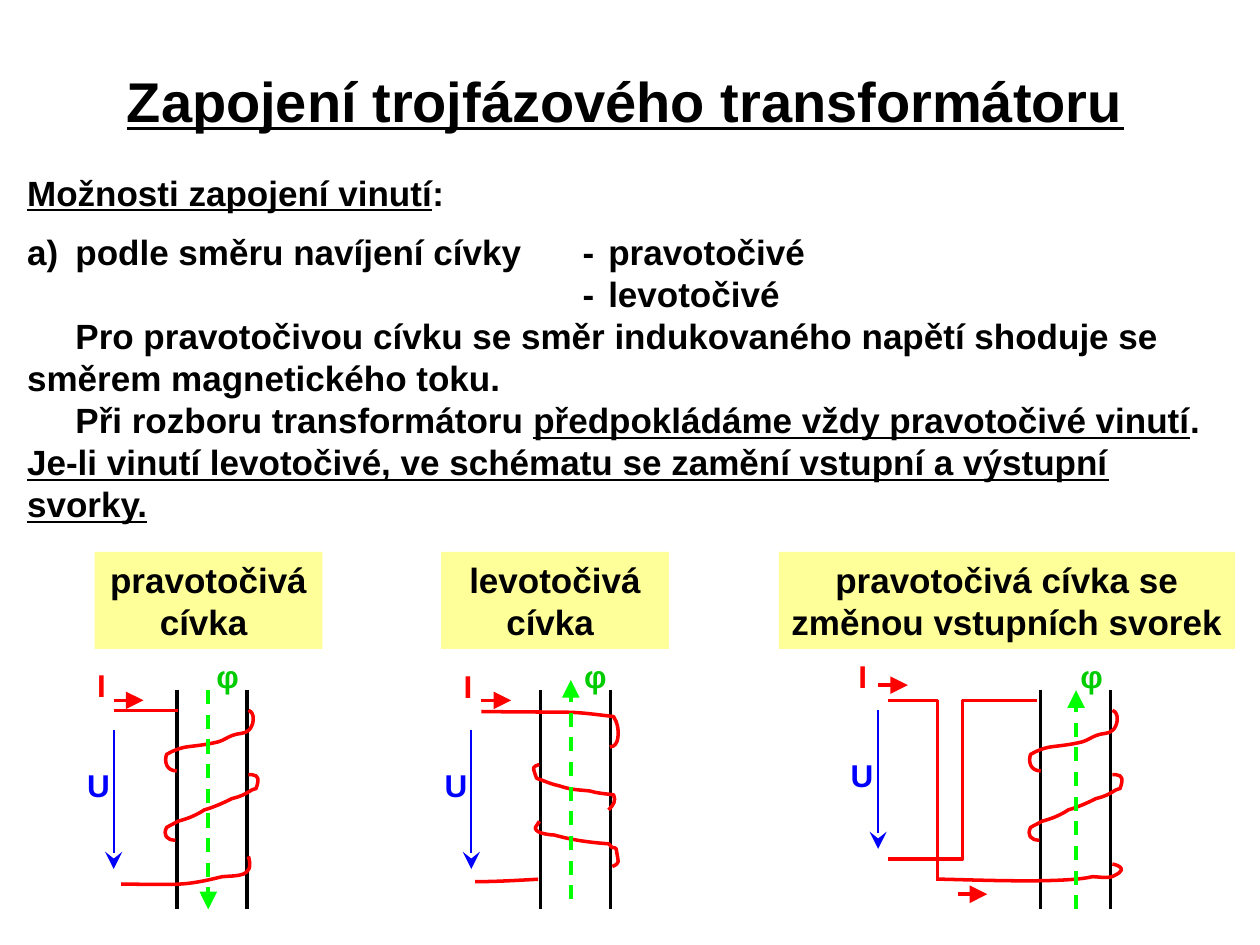
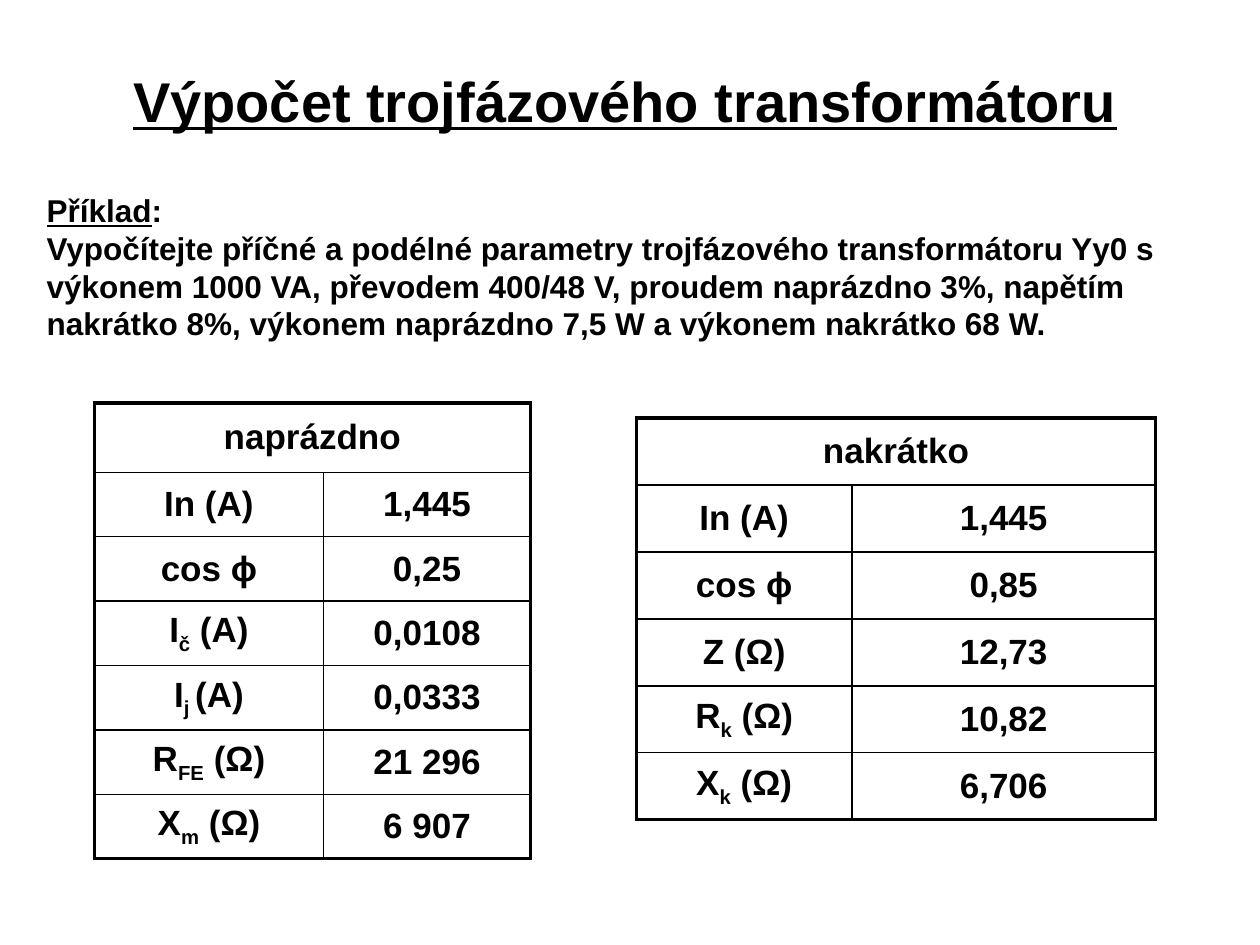
from dataclasses import dataclass
from typing import NamedTuple

from lxml.etree import SubElement
from pptx import Presentation
from pptx.dml.color import RGBColor
from pptx.enum.dml import MSO_LINE_DASH_STYLE as Dash
from pptx.enum.shapes import MSO_CONNECTOR as Connector, MSO_SHAPE as Preset
from pptx.enum.text import MSO_ANCHOR as Anchor, PP_ALIGN as Align
from pptx.oxml import parse_xml
from pptx.oxml.ns import nsdecls, qn
from pptx.util import Pt

Point = tuple[float, float]


@dataclass(frozen=True)
class Theme:
    font: str = "Arial"
    ink: str = "000000"
    winding: str = "FF0000"
    voltage: str = "0000FF"
    flux: str = "00FF00"
    flux_symbol: str = "00CC00"
    label: str = "FFFF99"
    title_size: float = 32
    body_size: float = 20
    small_size: float = 18
    stroke: float = 2
    thin: float = 1
    frame: float = 2.25


THEME = Theme()
UNDERLINE = {"u": "sng"}
SUBSCRIPT = {"baseline": "-25000"}
TAB_STOPS = (27.6, 317.4, 332.1)
CORE_TOP, CORE_HEIGHT, CORE_WIDTH = 394.4, 125.2, 40
LABEL_TOP, LABEL_HEIGHT = 315.4, 55.4
SYMBOL_HEIGHT = 28.8
VOLTAGE_LENGTH, CURRENT_LENGTH = 79.2, 17


class Box(NamedTuple):
    left: float
    top: float
    width: float
    height: float


class Symbol(NamedTuple):
    text: str
    color: str
    left: float
    top: float
    width: float = 28
    align: Align = Align.CENTER


@dataclass(frozen=True)
class Coil:
    label: str
    label_left: float
    label_width: float
    core_left: float
    turns: tuple[tuple[Point, ...], ...]
    leads: tuple[tuple[Point, ...], ...]
    voltage: Point
    currents: tuple[Point, ...]
    flux: tuple[Point, Point]
    symbols: tuple[Symbol, ...]

    def place(self, point: Point) -> Point:
        return self.core_left + point[0], CORE_TOP + point[1]


@dataclass(frozen=True)
class Measurement:
    title: str
    left: float
    top: float
    columns: tuple[float, float]
    title_height: float
    row_height: float
    rows: tuple[tuple[str, str], ...]


UPPER_TURN = (
    (41, 11.5), (45.4, 13), (43.9, 20.9), (41, 23), (38.9, 25.2), (34.6, 24.5), (31.7, 25.9),
    (29.5, 26.6), (26.6, 28.8), (23.8, 29.5), (18, 31), (11.5, 31.7), (5.8, 32.4),
    (1.4, 33.1), (-2.2, 34.6), (-5.8, 36.7), (-7.2, 41), (-5.8, 46.1), (0, 46.1))
LOWER_TURN = (
    (41, 48.2), (42.5, 48.2), (43.9, 48.2), (45.4, 49), (47.5, 50.4), (46.1, 54), (45.4, 56.2),
    (44.6, 56.9), (43.9, 56.9), (43.2, 56.9), (38.2, 59.8), (37.4, 60.5), (31.7, 61.9),
    (27.4, 64.1), (20.9, 67), (15.8, 68.4), (11.5, 71.3), (6.5, 73.4), (0.7, 74.9),
    (-1.4, 76.3), (-3.6, 77), (-5.8, 78.5), (-7.9, 82.8), (-5.8, 85.7), (-0.7, 85.7))
RIGHT_ENTRY = ((-36, 11.5), (-23.8, 11.5), (-11.5, 11.5), (0.7, 11.5))
RIGHT_EXIT = (
    (41, 95), (44.6, 107.3), (34.6, 105.8), (25.9, 106.6),
    (2.9, 112.3), (0.7, 110.9), (-31.7, 110.9))
SWAPPED_EXIT = (
    (41, 99.4), (41.8, 99.4), (51.1, 101.5), (42.5, 105.8), (38.9, 108), (33.8, 106.6),
    (29.5, 106.6), (12.2, 110.9), (-47.5, 108), (-59.8, 108))
LEFT_ENTRY = (
    (-33.8, 12.2), (25.2, 13), (12.2, 11.5), (41.8, 15.1), (42.5, 17.3), (43.9, 18),
    (43.9, 20.2), (44.6, 23), (45.4, 32.4), (39.6, 32.4))
LEFT_UPPER_TURN = (
    (-0.7, 42.5), (-4.3, 43.9), (-5, 43.2), (-2.2, 50.4), (-2.2, 51.1), (-0.7, 50.4), (0, 51.1),
    (3.6, 52.6), (7.2, 54), (10.8, 54.7), (17.3, 56.9), (20.9, 56.9), (28.1, 57.6),
    (33.1, 59), (35.3, 59), (41.8, 59.8), (43.2, 63.4), (41.8, 65.5), (38.9, 68.4))
LEFT_LOWER_TURN = (
    (-0.7, 74.9), (-0.7, 75.6), (-3.6, 78.5), (-2.9, 79.2), (-2.2, 82.1), (6.5, 82.8),
    (7.9, 82.8), (18, 85.7), (28.8, 87.1), (38.9, 87.8), (39.6, 88.6), (40.3, 89.3), (41, 90),
    (41.8, 90), (43.2, 90), (43.2, 90.7), (44.6, 99.4), (45.4, 98.6), (41, 100.8))
LEFT_EXIT = ((-1.4, 108), (-13.7, 108.7), (-25.2, 109.4), (-37.4, 109.4))


def symbols(current: Point, voltage: Point, flux: Point, current_width: float) -> tuple[Symbol, ...]:
    return (Symbol("I", THEME.winding, *current, current_width),
            Symbol("U", THEME.voltage, *voltage, align=Align.LEFT),
            Symbol("φ", THEME.flux_symbol, *flux))


COILS = (
    Coil("pravotočivá cívka ", 54, 130.3, 101,
         (RIGHT_ENTRY, UPPER_TURN, LOWER_TURN, RIGHT_EXIT), (),
         (-36, 23), ((-36, 5.8),), ((18, 0), (18, CORE_HEIGHT)),
         symbols((-52.6, -17.3), (-58.3, 39.6), (15.1, -22.3), 17.3)),
    Coil("levotočivá cívka ", 252, 130.3, 308.9,
         (LEFT_ENTRY, LEFT_UPPER_TURN, LEFT_LOWER_TURN, LEFT_EXIT), (),
         (-39.6, 23), ((-33.8, 5.8),), ((17.3, 119.5), (17.3, -5.8)),
         symbols((-51.1, -16.6), (-61.9, 39.6), (17.3, -22.6), 17.3)),
    Coil("pravotočivá cívka se změnou vstupních svorek ", 445, 260.6, 594.7,
         (UPPER_TURN, LOWER_TURN, SWAPPED_EXIT),
         (((-2.2, 5.8), (-44.6, 5.8), (-44.6, 96.5), (-87.1, 96.5)),
          ((-59, 108), (-59, 5.8), (-87.1, 5.8))),
         (-92.9, 11.5), ((-92.9, -2.9), (-47.5, 116.6)), ((20.2, CORE_HEIGHT), (20.2, 0)),
         symbols((-115.7, -22.6), (-115.7, 33.8), (15.1, -22.6), 28)),
)

MEASUREMENTS = (
    Measurement("naprázdno", 53.9, 230.3, (131.1, 118.1), 39.6, 36.8, (
        ("In (A)", "1,445"), ("cos ϕ", "0,25"), ("I_č_ (A)", "0,0108"),
        ("I_j _(A)", "0,0333"), ("R_FE_ (Ω)", "21 296"), ("X_m_ (Ω)", "6 907"))),
    Measurement("nakrátko", 363.7, 238.9, (123.1, 173.5), 38.25, 38.25, (
        ("In (A)", "1,445"), ("cos ϕ", "0,85"), ("Z (Ω)", "12,73"),
        ("R_k_ (Ω)", "10,82"), ("X_k_ (Ω)", "6,706"))),
)

WINDING_TEXT = (
    "_Možnosti zapojení vinutí_:",
    "a)\tpodle směru navíjení cívky\t-\tpravotočivé",
    "\t\t-\tlevotočivé",
    "\tPro pravotočivou cívku se směr indukovaného napětí shoduje se směrem magnetického toku.",
    "\tPři rozboru transformátoru _předpokládáme vždy pravotočivé vinutí_. "
    "_Je-li vinutí levotočivé, ve schématu se zamění vstupní a výstupní svorky._",
)
EXAMPLE_TEXT = (
    "_Příklad_:",
    "Vypočítejte příčné a podélné parametry trojfázového transformátoru Yy0 s výkonem 1000 VA, "
    "převodem 400/48 V, proudem naprázdno 3%, napětím nakrátko 8%, výkonem naprázdno 7,5 W "
    "a výkonem nakrátko 68 W.",
)


def write(paragraph, marked: str, size: float, color: str = THEME.ink,
          align: Align = Align.LEFT, accent: dict = UNDERLINE) -> None:
    paragraph.alignment = align
    for position, part in enumerate(marked.split("_")):
        if not part:
            continue
        run = paragraph.add_run()
        run.text = part
        for name, value in {"name": THEME.font, "size": Pt(size), "bold": True}.items():
            setattr(run.font, name, value)
        run.font.color.rgb = RGBColor.from_string(color)
        if position % 2:
            for name, value in accent.items():
                run._r.get_or_add_rPr().set(name, value)


def add_text(slide, box: Box, lines: tuple[str, ...], size: float, color: str = THEME.ink,
             align: Align = Align.LEFT, anchor: Anchor = Anchor.TOP):
    frame = slide.shapes.add_textbox(*map(Pt, box)).text_frame
    frame.word_wrap = True
    frame.vertical_anchor = anchor
    for number, line in enumerate(lines):
        write(frame.add_paragraph() if number else frame.paragraphs[0], line, size, color, align)
    return frame


def add_title(slide, title: str) -> None:
    add_text(slide, Box(42.7, 25.9, 629.3, 62.6), (f"_{title}_",), THEME.title_size,
             align=Align.CENTER, anchor=Anchor.MIDDLE)


def set_tabs(paragraph) -> None:
    tabs = SubElement(paragraph._p.get_or_add_pPr(), qn("a:tabLst"))
    for stop in TAB_STOPS:
        SubElement(tabs, qn("a:tab"), pos=str(Pt(stop)), algn="l")


def add_line(shapes, start: Point, end: Point, color: str, width: float = THEME.stroke,
             arrow: str = "", dashed: bool = False) -> None:
    line = shapes.add_connector(Connector.STRAIGHT, *map(Pt, start + end))
    line.line.color.rgb = RGBColor.from_string(color)
    line.line.width = Pt(width)
    if dashed:
        line.line.dash_style = Dash.DASH
    if arrow:
        SubElement(line.line._get_or_add_ln(), qn("a:tailEnd"), type=arrow, w="lg", len="lg")
    SubElement(line._element.spPr, qn("a:effectLst"))


def add_wire(shapes, points: list[Point], curved: bool) -> None:
    start, *rest = [(Pt(x), Pt(y)) for x, y in points]
    builder = shapes.build_freeform(*start)
    builder.add_line_segments(rest, close=False)
    wire = builder.convert_to_shape()
    wire.fill.background()
    wire.line.color.rgb = RGBColor.from_string(THEME.winding)
    wire.line.width = Pt(THEME.stroke)
    wire.shadow.inherit = False
    if curved:
        bend_segments(wire)


def bend_segments(wire) -> None:
    segments = list(wire._element.iter(qn("a:lnTo")))
    outline = segments[0].getparent()
    for first in range(0, len(segments), 3):
        curve = SubElement(outline, qn("a:cubicBezTo"))
        for segment in segments[first:first + 3]:
            curve.append(segment[0])
            outline.remove(segment)


def add_label(slide, coil: Coil) -> None:
    label = slide.shapes.add_shape(Preset.RECTANGLE, *map(
        Pt, (coil.label_left, LABEL_TOP, coil.label_width, LABEL_HEIGHT)))
    label.fill.solid()
    label.fill.fore_color.rgb = RGBColor.from_string(THEME.label)
    label.line.fill.background()
    label.shadow.inherit = False
    label.text_frame.word_wrap = True
    label.text_frame.vertical_anchor = Anchor.TOP
    write(label.text_frame.paragraphs[0], coil.label, THEME.body_size, align=Align.CENTER)


def add_coil(slide, coil: Coil) -> None:
    shapes = slide.shapes.add_group_shape().shapes
    for side in (0, CORE_WIDTH):
        add_line(shapes, coil.place((side, 0)), coil.place((side, CORE_HEIGHT)), THEME.ink)
    for wires, curved in ((coil.turns, True), (coil.leads, False)):
        for wire in wires:
            add_wire(shapes, [coil.place(point) for point in wire], curved)


def annotate_coil(slide, coil: Coil) -> None:
    add_label(slide, coil)
    x, y = coil.voltage
    add_line(slide.shapes, coil.place((x, y)), coil.place((x, y + VOLTAGE_LENGTH)),
             THEME.voltage, THEME.thin, "stealth")
    for x, y in coil.currents:
        add_line(slide.shapes, coil.place((x, y)), coil.place((x + CURRENT_LENGTH, y)),
                 THEME.winding, arrow="triangle")
    add_line(slide.shapes, *map(coil.place, coil.flux), THEME.flux, arrow="triangle", dashed=True)
    for symbol in coil.symbols:
        box = Box(*coil.place((symbol.left, symbol.top)), symbol.width, SYMBOL_HEIGHT)
        add_text(slide, box, (symbol.text,), THEME.small_size, symbol.color, symbol.align)


def set_borders(cell, outer: dict[str, bool]) -> None:
    cell.fill.background()
    for position, (side, is_outer) in enumerate(outer.items()):
        width = Pt(THEME.frame if is_outer else THEME.thin)
        cell._tc.get_or_add_tcPr().insert(position, parse_xml(
            f'<a:ln{side} {nsdecls("a")} w="{width}"><a:solidFill>'
            f'<a:srgbClr val="{THEME.ink}"/></a:solidFill></a:ln{side}>'))


def add_measurement(slide, data: Measurement) -> None:
    heights = [data.title_height] + [data.row_height] * len(data.rows)
    box = Box(data.left, data.top, sum(data.columns), sum(heights))
    table = slide.shapes.add_table(len(heights), 2, *map(Pt, box)).table
    for name in ("first_row", "horz_banding"):
        setattr(table, name, False)
    for column, width in zip(table.columns, data.columns):
        column.width = Pt(width)
    for row, height in zip(table.rows, heights):
        row.height = Pt(height)
    table.cell(0, 0).merge(table.cell(0, 1))
    last = len(heights) - 1
    for r, texts in enumerate(((data.title, ""), *data.rows)):
        for c, text in enumerate(texts):
            cell = table.cell(r, c)
            cell.vertical_anchor = Anchor.MIDDLE
            write(cell.text_frame.paragraphs[0], text, THEME.body_size,
                  align=Align.CENTER, accent=SUBSCRIPT)
            set_borders(cell, {"L": c == 0, "R": c == 1 or r == 0, "T": r == 0, "B": r == last})


def main() -> None:
    deck = Presentation()
    deck.slide_width, deck.slide_height = Pt(720), Pt(540)
    blank = deck.slide_layouts[6]

    winding = deck.slides.add_slide(blank)
    add_title(winding, "Zapojení trojfázového transformátoru")
    body = add_text(winding, Box(8.4, 94.3, 697.7, 211), WINDING_TEXT, THEME.body_size)
    body.paragraphs[1].space_before = Pt(10)
    for paragraph in body.paragraphs[1:]:
        set_tabs(paragraph)
    for draw in (add_coil, annotate_coil):
        for coil in COILS:
            draw(winding, coil)

    example = deck.slides.add_slide(blank)
    add_text(example, Box(19.6, 105.6, 680.4, 93.6), EXAMPLE_TEXT, THEME.small_size)
    add_title(example, "Výpočet trojfázového transformátoru")
    for data in MEASUREMENTS:
        add_measurement(example, data)

    deck.save("out.pptx")


if __name__ == "__main__":
    main()
